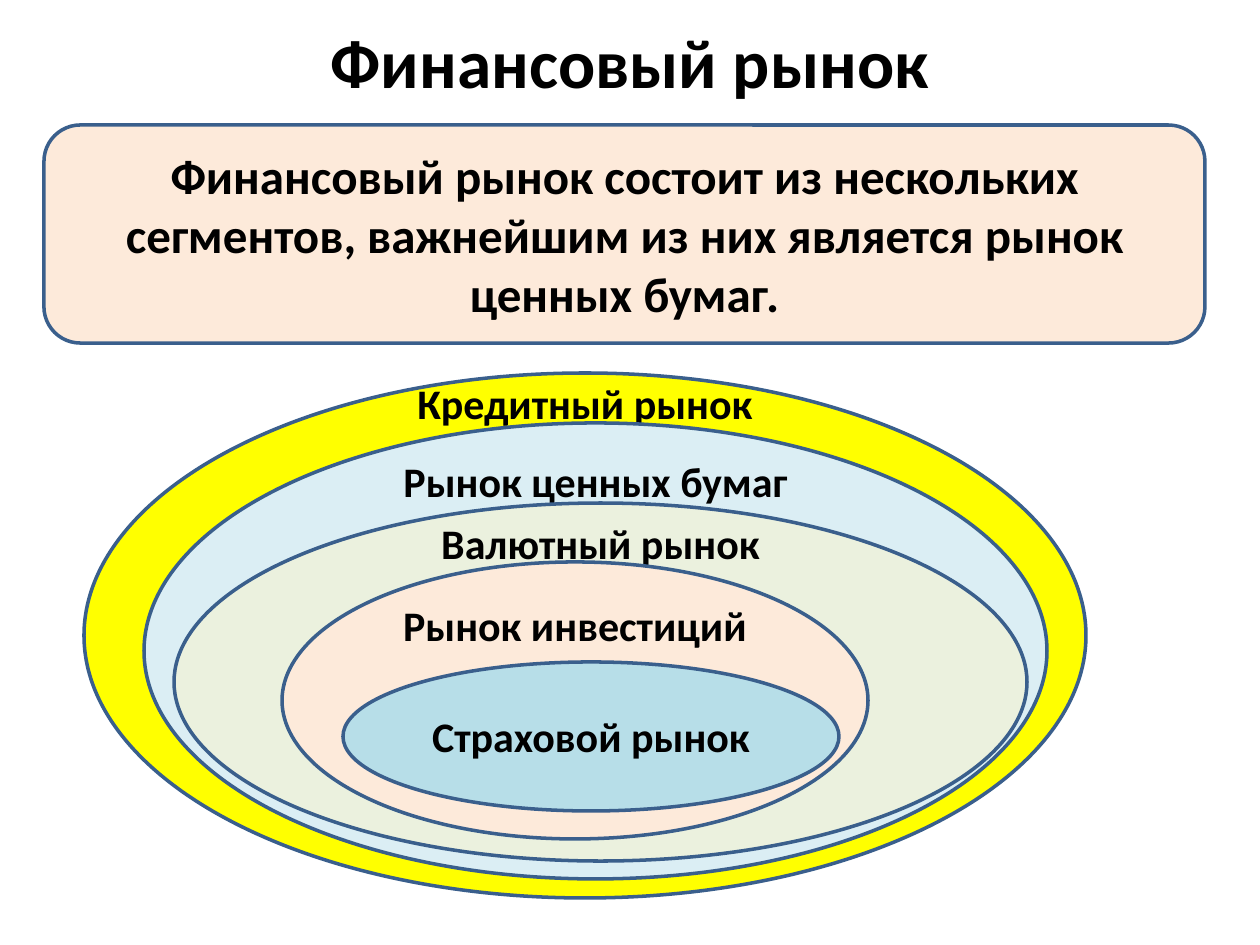
from dataclasses import dataclass

from pptx import Presentation
from pptx.dml.color import RGBColor
from pptx.enum.shapes import MSO_SHAPE
from pptx.enum.text import MSO_ANCHOR, MSO_AUTO_SIZE, PP_ALIGN
from pptx.util import Emu, Pt

EMU_PER_PX = 914400 / 126
LABEL_HEIGHT = 52


@dataclass
class Area:
    left: int
    top: int
    width: int
    height: int


@dataclass
class Market:
    name: str
    area: Area
    label_top: int
    fill: str


MARKETS = [
    Market("Кредитный рынок", Area(84, 373, 1002, 525), 377, "FFFF00"),
    Market("Рынок ценных бумаг", Area(144, 423, 903, 456), 455, "DBEEF4"),
    Market("Валютный рынок", Area(174, 503, 853, 358), 517, "EBF1DE"),
    Market("Рынок инвестиций", Area(282, 562, 586, 277), 599, "FDEADA"),
    Market("Страховой рынок", Area(343, 662, 496, 149), 710, "B7DEE8"),
]


def px(length: int) -> Emu:
    """Turn pixels into EMU."""
    return Emu(round(length * EMU_PER_PX))


def color(value: str) -> RGBColor:
    """Turn a hex string into a colour."""
    return RGBColor.from_string(value)


def bounds(area: Area) -> tuple[Emu, Emu, Emu, Emu]:
    """Give the position and size of an area in EMU."""
    return px(area.left), px(area.top), px(area.width), px(area.height)


def write(shape, text: str, size: float) -> None:
    """Put bold black text in the middle of a shape."""
    frame = shape.text_frame
    frame.text = text
    frame.word_wrap = True
    frame.auto_size = MSO_AUTO_SIZE.NONE
    frame.vertical_anchor = MSO_ANCHOR.MIDDLE
    para = frame.paragraphs[0]
    para.alignment = PP_ALIGN.CENTER
    font = para.runs[0].font
    font.name = "Calibri"
    font.size = Pt(size)
    font.bold = True
    font.color.rgb = color("000000")


def add_outlined(page, kind: MSO_SHAPE, area: Area, fill: str):
    """Add a filled shape with a blue outline."""
    shape = page.shapes.add_shape(kind, *bounds(area))
    shape.shadow.inherit = False
    shape.fill.solid()
    shape.fill.fore_color.rgb = color(fill)
    shape.line.color.rgb = color("3A5F8C")
    shape.line.width = Pt(2)
    return shape


def add_market(page, market: Market) -> None:
    """Add a market ellipse and the label centred across it."""
    area = market.area
    add_outlined(page, MSO_SHAPE.OVAL, area, market.fill)
    label = Area(area.left, market.label_top, area.width, LABEL_HEIGHT)
    box = page.shapes.add_textbox(*bounds(label))
    box.text_frame.margin_top = box.text_frame.margin_bottom = 0
    write(box, market.name, 24)


def main() -> None:
    """Build the slide and save it."""
    deck = Presentation()
    deck.slide_width, deck.slide_height = px(1260), px(945)
    page = deck.slides.add_slide(deck.slide_layouts[5])
    title = page.shapes.title
    title.left, title.top, title.width, title.height = bounds(Area(63, 26, 1134, 70))
    write(title, "Финансовый рынок", 39.6)
    summary = add_outlined(page, MSO_SHAPE.ROUNDED_RECTANGLE, Area(44, 125, 1161, 218), "FDEADA")
    write(
        summary,
        "Финансовый рынок состоит из нескольких сегментов, "
        "важнейшим из них является рынок ценных бумаг.",
        28,
    )
    for market in MARKETS:
        add_market(page, market)
    deck.save("out.pptx")


if __name__ == "__main__":
    main()
